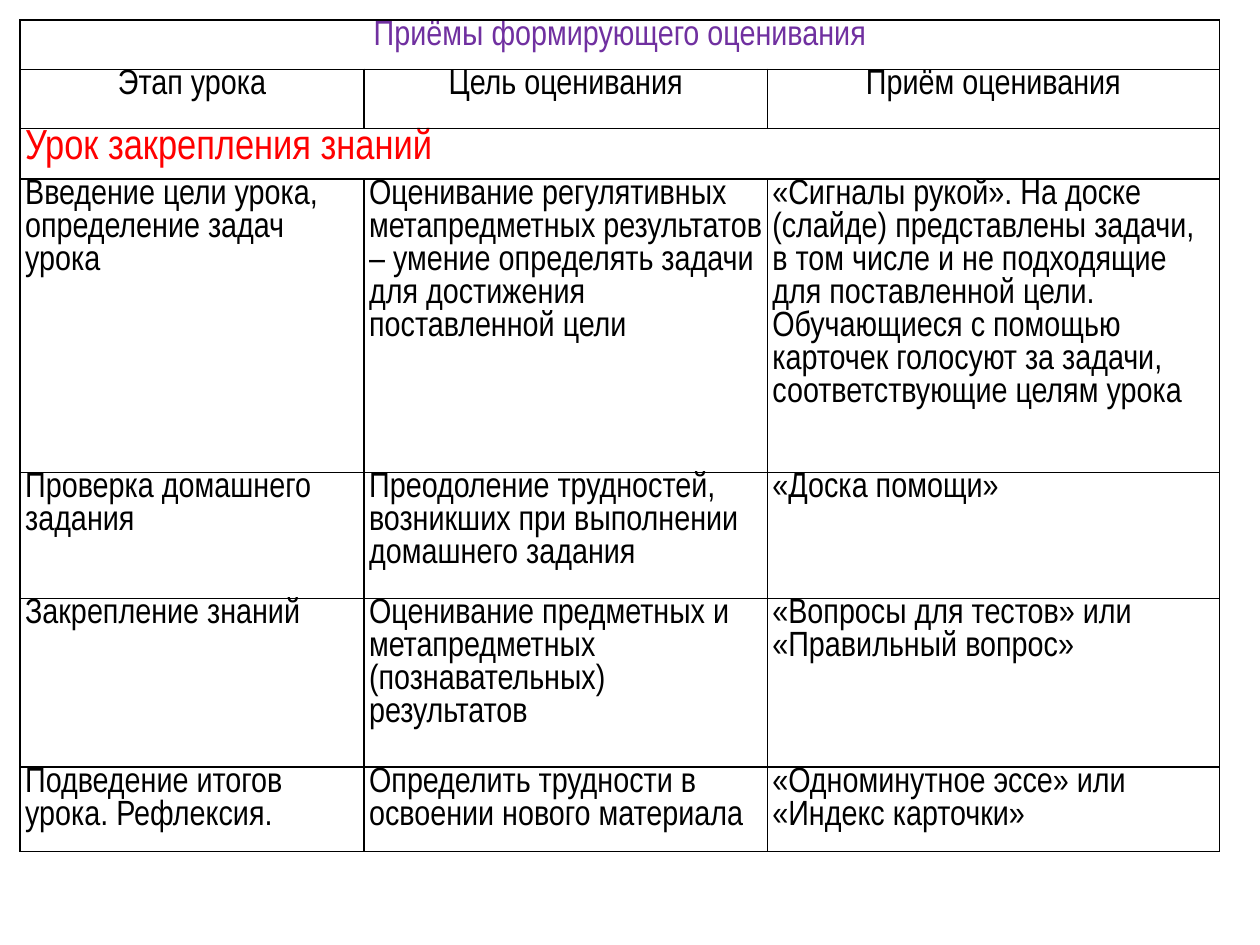
from dataclasses import dataclass

from lxml.etree import SubElement
from pptx import Presentation
from pptx.dml.color import RGBColor
from pptx.enum.text import PP_ALIGN
from pptx.oxml.ns import qn
from pptx.table import Table, _Cell
from pptx.util import Inches, Pt


@dataclass(frozen=True)
class Theme:
    font: str = "Arial Narrow"
    text: str = "000000"
    title: str = "7030A0"
    section: str = "FF0000"
    background: str = "FFFFFF"
    border: str = "000000"
    border_width: float = 1
    body_size: float = 20
    section_size: float = 24


THEME = Theme()


@dataclass(frozen=True)
class TableRow:
    height: float
    texts: tuple[str, ...]
    color: str = THEME.text
    size: float = THEME.body_size
    alignment: PP_ALIGN = PP_ALIGN.LEFT


COLUMN_WIDTHS = (2.73, 3.2, 3.59)
ROWS = (
    TableRow(0.39, ("Приёмы формирующего оценивания",), THEME.title,
             alignment=PP_ALIGN.CENTER),
    TableRow(0.47, ("Этап урока", "Цель оценивания", "Приём оценивания"),
             alignment=PP_ALIGN.CENTER),
    TableRow(0.4, ("Урок закрепления знаний",), THEME.section,
             THEME.section_size, PP_ALIGN.JUSTIFY),
    TableRow(2.33, (
        "Введение цели урока, определение задач урока",
        "Оценивание регулятивных метапредметных результатов – умение "
        "определять задачи для достижения поставленной цели",
        "«Сигналы рукой». На доске (слайде) представлены задачи, в том числе "
        "и не подходящие для поставленной цели. Обучающиеся с помощью "
        "карточек голосуют за задачи, соответствующие целям урока",
    )),
    TableRow(1.0, (
        "Проверка домашнего задания",
        "Преодоление трудностей, возникших при выполнении домашнего задания",
        "«Доска помощи»",
    )),
    TableRow(1.34, (
        "Закрепление знаний",
        "Оценивание предметных и метапредметных (познавательных) результатов",
        "«Вопросы для тестов» или «Правильный вопрос»",
    )),
    TableRow(0.67, (
        "Подведение итогов урока. Рефлексия.",
        "Определить трудности в освоении нового материала",
        "«Одноминутное эссе» или «Индекс карточки»",
    )),
)


def style_cell(cell: _Cell) -> None:
    cell.margin_left = cell.margin_right = Inches(0.04)
    cell.margin_top = cell.margin_bottom = 0
    properties = cell._tc.get_or_add_tcPr()
    for side in ("a:lnL", "a:lnR", "a:lnT", "a:lnB"):
        line = SubElement(properties, qn(side), w=str(Pt(THEME.border_width)))
        fill = SubElement(line, qn("a:solidFill"))
        SubElement(fill, qn("a:srgbClr"), val=THEME.border)
    cell.fill.solid()
    cell.fill.fore_color.rgb = RGBColor.from_string(THEME.background)


def write_cell(cell: _Cell, text: str, row: TableRow) -> None:
    cell.text = text
    paragraph = cell.text_frame.paragraphs[0]
    paragraph.alignment = row.alignment
    paragraph.font.name = THEME.font
    paragraph.font.size = Pt(row.size)
    paragraph.font.color.rgb = RGBColor.from_string(row.color)


def fill_row(table: Table, index: int, row: TableRow) -> None:
    table.rows[index].height = Inches(row.height)
    last_column = len(COLUMN_WIDTHS) - 1
    for column in range(last_column + 1):
        style_cell(table.cell(index, column))
    if len(row.texts) == 1:
        table.cell(index, 0).merge(table.cell(index, last_column))
    for column, text in enumerate(row.texts):
        write_cell(table.cell(index, column), text, row)


def main() -> None:
    presentation = Presentation()
    presentation.slide_width = Inches(10)
    presentation.slide_height = Inches(7.5)
    slide = presentation.slides.add_slide(presentation.slide_layouts[6])

    table = slide.shapes.add_table(
        len(ROWS), len(COLUMN_WIDTHS), Inches(0.16), Inches(0.16),
        Inches(sum(COLUMN_WIDTHS)), Inches(sum(row.height for row in ROWS)),
    ).table
    table.first_row = table.horz_banding = False
    for column, width in zip(table.columns, COLUMN_WIDTHS):
        column.width = Inches(width)
    for index, row in enumerate(ROWS):
        fill_row(table, index, row)

    presentation.save("out.pptx")


if __name__ == "__main__":
    main()
